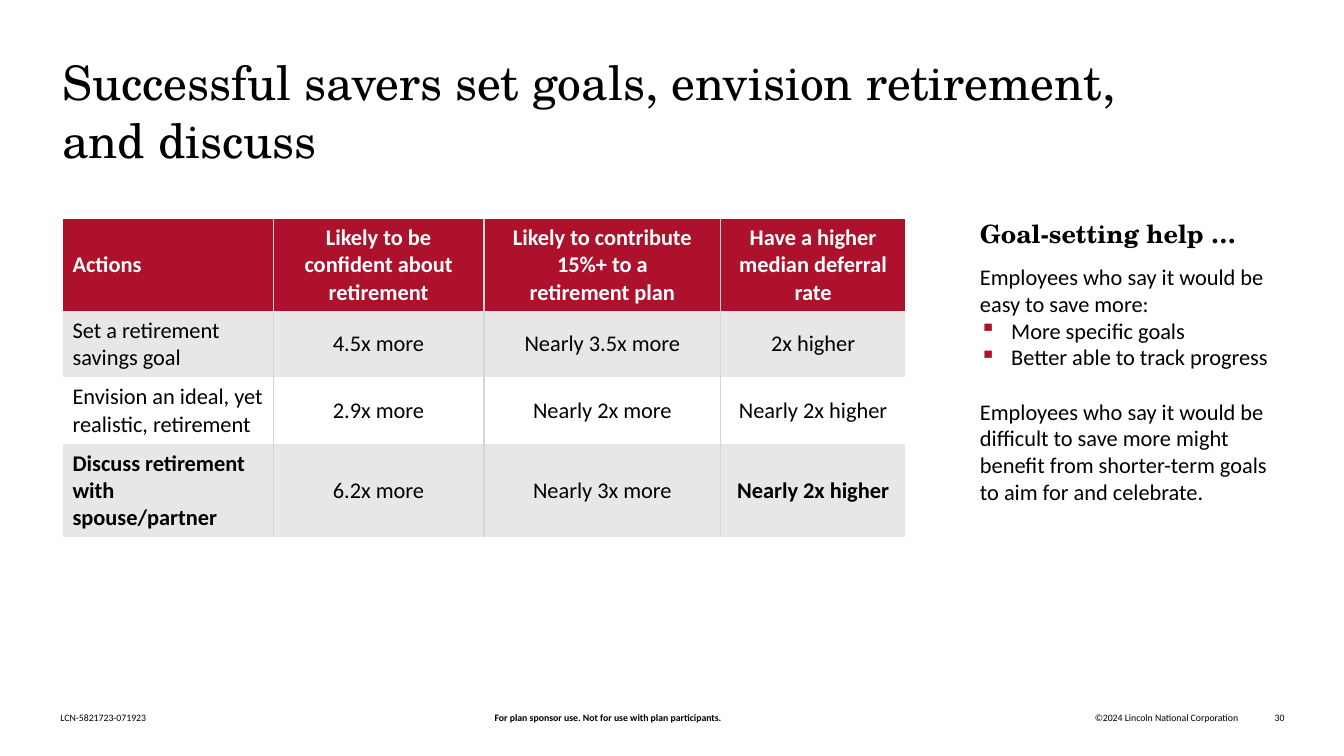
"""Build the slide on the habits of successful retirement savers."""
from dataclasses import dataclass

from lxml.etree import SubElement
from pptx import Presentation
from pptx.dml.color import RGBColor
from pptx.enum.text import MSO_ANCHOR as Anchor, PP_ALIGN as Align
from pptx.oxml import parse_xml
from pptx.oxml.ns import nsdecls, qn
from pptx.util import Inches, Pt


@dataclass(frozen=True)
class Theme:
    """Colours, fonts and type sizes of the slide."""
    black: str = "000000"
    white: str = "FFFFFF"
    red: str = "AD112B"
    band: str = "E7E7E7"
    rule: str = "D5D5D7"
    serif: str = "TeX Gyre Schola"
    sans: str = "Calibri"
    title: int = 34
    heading: int = 18
    body: int = 16
    footer: int = 7


THEME = Theme()
PLAIN_TABLE = "{2D5ABB26-0587-4C30-8999-92F81FD0307C}"

HABITS = [
    ["Actions", "Likely to be confident about retirement",
     "Likely to contribute 15%+ to a\vretirement plan",
     "Have a higher median deferral rate"],
    ["Set a retirement savings goal", "4.5x more", "Nearly 3.5x more", "2x higher"],
    ["Envision an ideal, yet realistic, retirement",
     "2.9x more", "Nearly 2x more", "Nearly 2x higher"],
    ["Discuss retirement with spouse/partner",
     "6.2x more", "Nearly 3x more", "Nearly 2x higher"],
]
COLUMN_WIDTHS = [2.09, 2.09, 2.35, 1.83]
ROW_HEIGHTS = [0.92, 0.65, 0.67, 0.92]
BOLD_CELLS = {(3, 0), (3, 3)}

FOOTERS = [
    ("LCN-5821723-071923", 0.6, 1.87, Align.LEFT, False),
    ("For plan sponsor use. Not for use with plan participants.",
     2.23, 7.6, Align.CENTER, True),
    ("©2024 Lincoln National Corporation", 9.83, 2.45, Align.RIGHT, False),
    ("30", 12.41, 0.33, Align.RIGHT, False),
]


def set_font(para, size, name=THEME.sans, color=THEME.black, bold=False):
    """Set the font of a whole paragraph."""
    font = para.font
    font.size, font.name, font.bold = Pt(size), name, bold
    font.color.rgb = RGBColor.from_string(color)


def add_box(page, left, top, width, height, anchor=Anchor.TOP):
    """Add a wrapping text box without margins and return its text frame."""
    box = page.shapes.add_textbox(*map(Inches, (left, top, width, height)))
    frame = box.text_frame
    frame.word_wrap = True
    frame.vertical_anchor = anchor
    frame.margin_left = frame.margin_right = 0
    frame.margin_top = frame.margin_bottom = 0
    return frame


def add_para(frame, text, before=0):
    """Append a body paragraph with the given space before it."""
    para = frame.add_paragraph()
    para.text = text
    para.space_before = Pt(before)
    set_font(para, THEME.body)
    return para


def add_bullet(frame, text):
    """Append a body paragraph with a red square bullet."""
    para = frame.add_paragraph()
    para.text = text
    props = para._p.get_or_add_pPr()
    props.set("marL", str(Inches(0.31)))
    props.set("indent", str(-Inches(0.31)))
    color = SubElement(props, qn("a:buClr"))
    SubElement(color, qn("a:srgbClr"), val=THEME.red)
    SubElement(props, qn("a:buChar"), char="▪")
    set_font(para, THEME.body)


def add_title(page, text):
    """Add the slide title."""
    para = add_box(page, 0.62, 0.53, 12.07, 1.15).paragraphs[0]
    para.text = text
    set_font(para, THEME.title, THEME.serif)


def add_side_rules(cell, sides):
    """Draw thin vertical rules on the named sides of a cell."""
    for place, side in enumerate(sides):
        cell._tc.get_or_add_tcPr().insert(place, parse_xml(
            f'<a:ln{side} {nsdecls("a")} w="{Pt(1)}"><a:solidFill>'
            f'<a:srgbClr val="{THEME.rule}"/></a:solidFill></a:ln{side}>'))


def fill_cell(cell, text, row, column):
    """Write and style one cell of the habits table."""
    header = row == 0
    cell.text = text
    cell.vertical_anchor = Anchor.MIDDLE
    para = cell.text_frame.paragraphs[0]
    para.alignment = Align.CENTER if column else Align.LEFT
    set_font(para, THEME.body, color=THEME.white if header else THEME.black,
             bold=header or (row, column) in BOLD_CELLS)
    fill = THEME.red if header else THEME.band if row % 2 else THEME.white
    cell.fill.solid()
    cell.fill.fore_color.rgb = RGBColor.from_string(fill)
    last = len(COLUMN_WIDTHS) - 1
    add_side_rules(cell, ("L" if column else "") + ("R" if column < last else ""))


def add_habits_table(page):
    """Add the table that compares savers' habits."""
    size = Inches(sum(COLUMN_WIDTHS)), Inches(sum(ROW_HEIGHTS))
    table = page.shapes.add_table(len(ROW_HEIGHTS), len(COLUMN_WIDTHS),
                                  Inches(0.62), Inches(2.17), *size).table
    table._tbl.tblPr.find(qn("a:tableStyleId")).text = PLAIN_TABLE
    table.horz_banding = False
    for column, width in zip(table.columns, COLUMN_WIDTHS):
        column.width = Inches(width)
    for row, height in zip(table.rows, ROW_HEIGHTS):
        row.height = Inches(height)
    for row, texts in enumerate(HABITS):
        for column, text in enumerate(texts):
            fill_cell(table.cell(row, column), text, row, column)


def add_goal_help(page):
    """Add the side text about setting goals."""
    frame = add_box(page, 9.72, 2.17, 2.96, 2.86)
    heading = frame.paragraphs[0]
    heading.text = "Goal-setting help …"
    set_font(heading, THEME.heading, THEME.serif, bold=True)
    add_para(frame, "Employees who say it would be easy to save more:", before=10)
    add_bullet(frame, "More specific goals")
    add_bullet(frame, "Better able to track progress")
    add_para(frame, "Employees who say it would be difficult to save more might "
             "benefit from shorter-term goals to aim for and celebrate.", before=19.5)


def add_footer(page, text, left, width, align, bold):
    """Add one piece of the footer line."""
    para = add_box(page, left, 7.06, width, 0.12, Anchor.BOTTOM).paragraphs[0]
    para.text = text
    para.alignment = align
    set_font(para, THEME.footer, bold=bold)


def main():
    """Build and save the deck."""
    deck = Presentation()
    deck.slide_width, deck.slide_height = Inches(13.33), Inches(7.5)
    page = deck.slides.add_slide(deck.slide_layouts[6])
    add_title(page, "Successful savers set goals, envision retirement,\vand discuss")
    add_habits_table(page)
    add_goal_help(page)
    for footer in FOOTERS:
        add_footer(page, *footer)
    deck.save("out.pptx")


if __name__ == "__main__":
    main()
